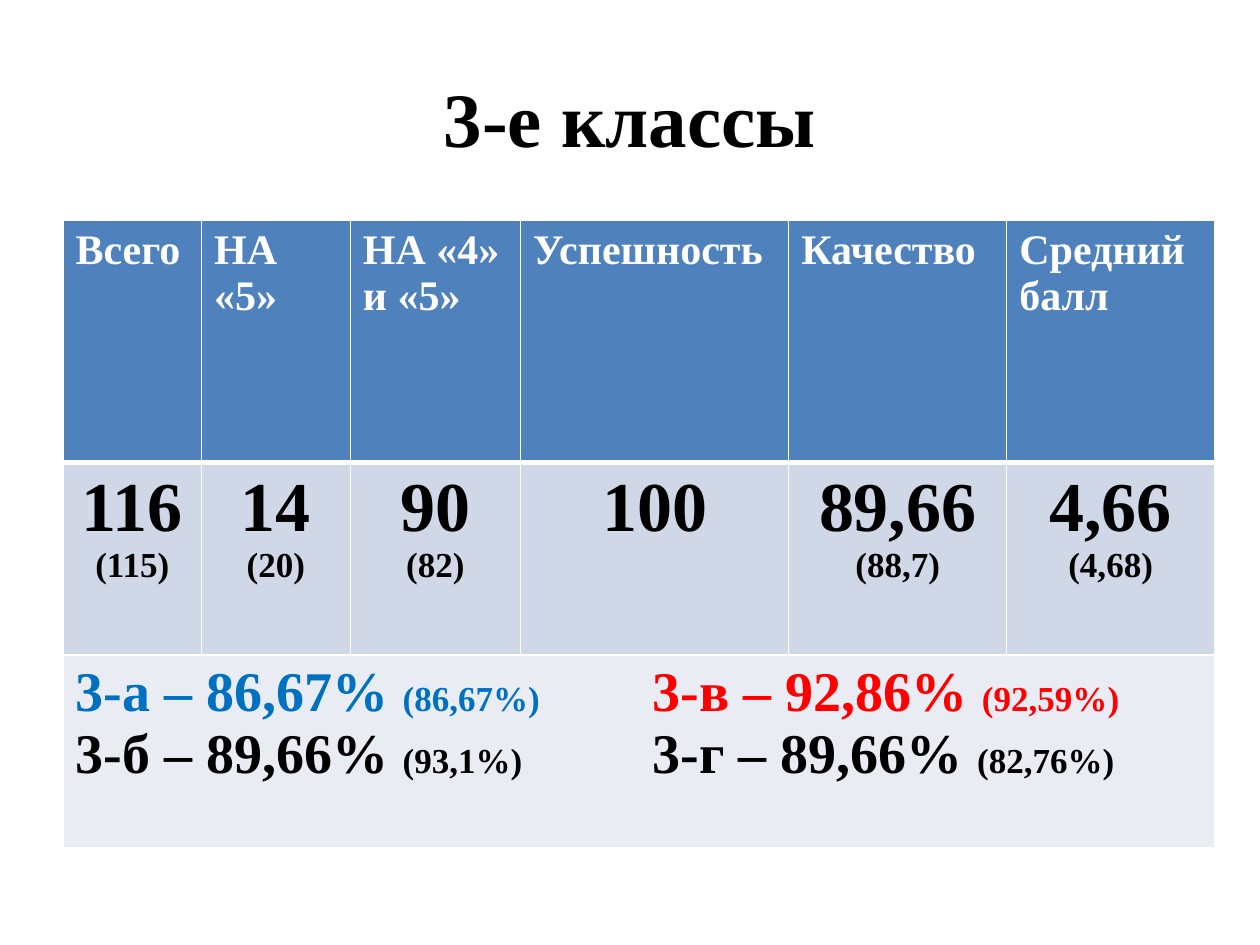
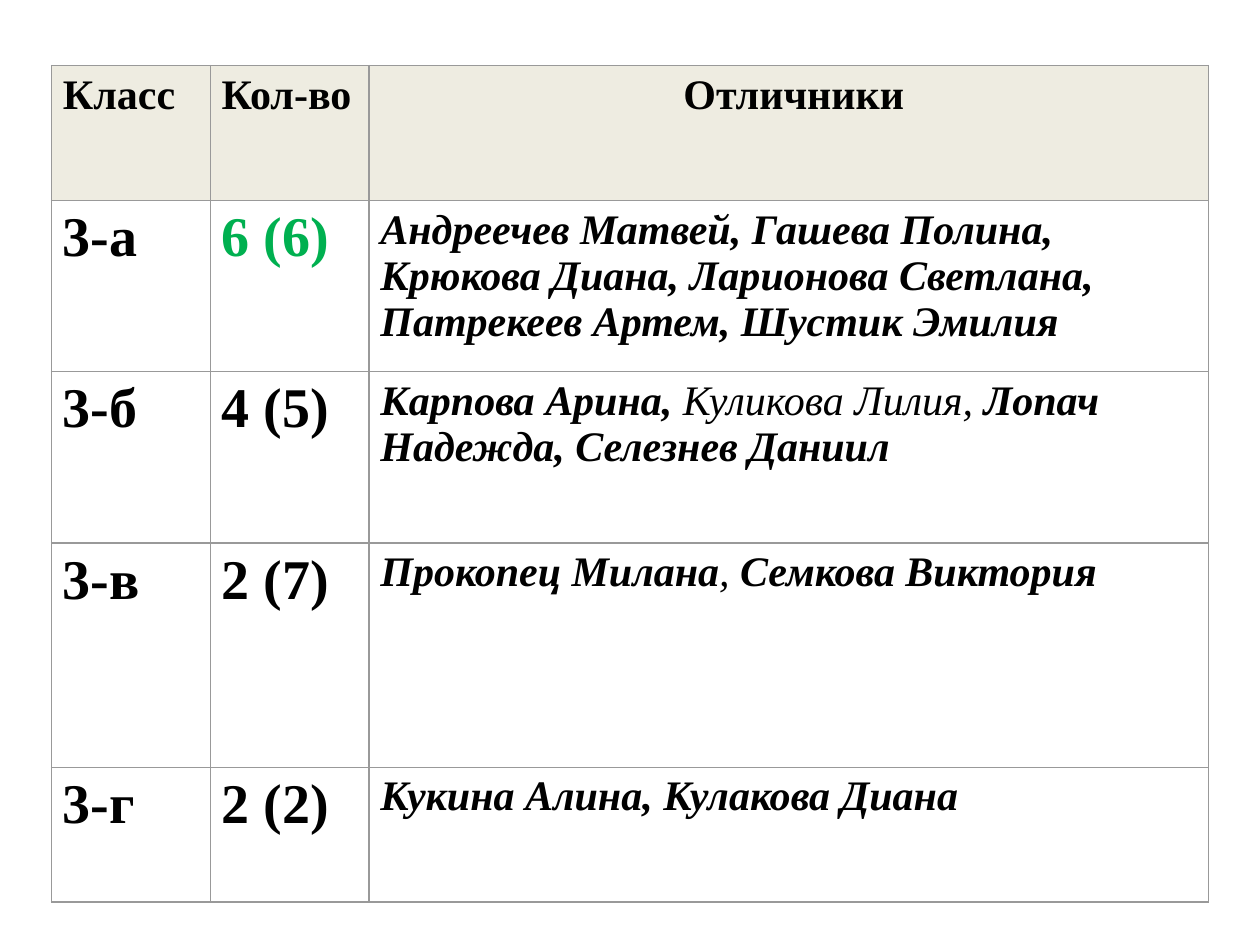
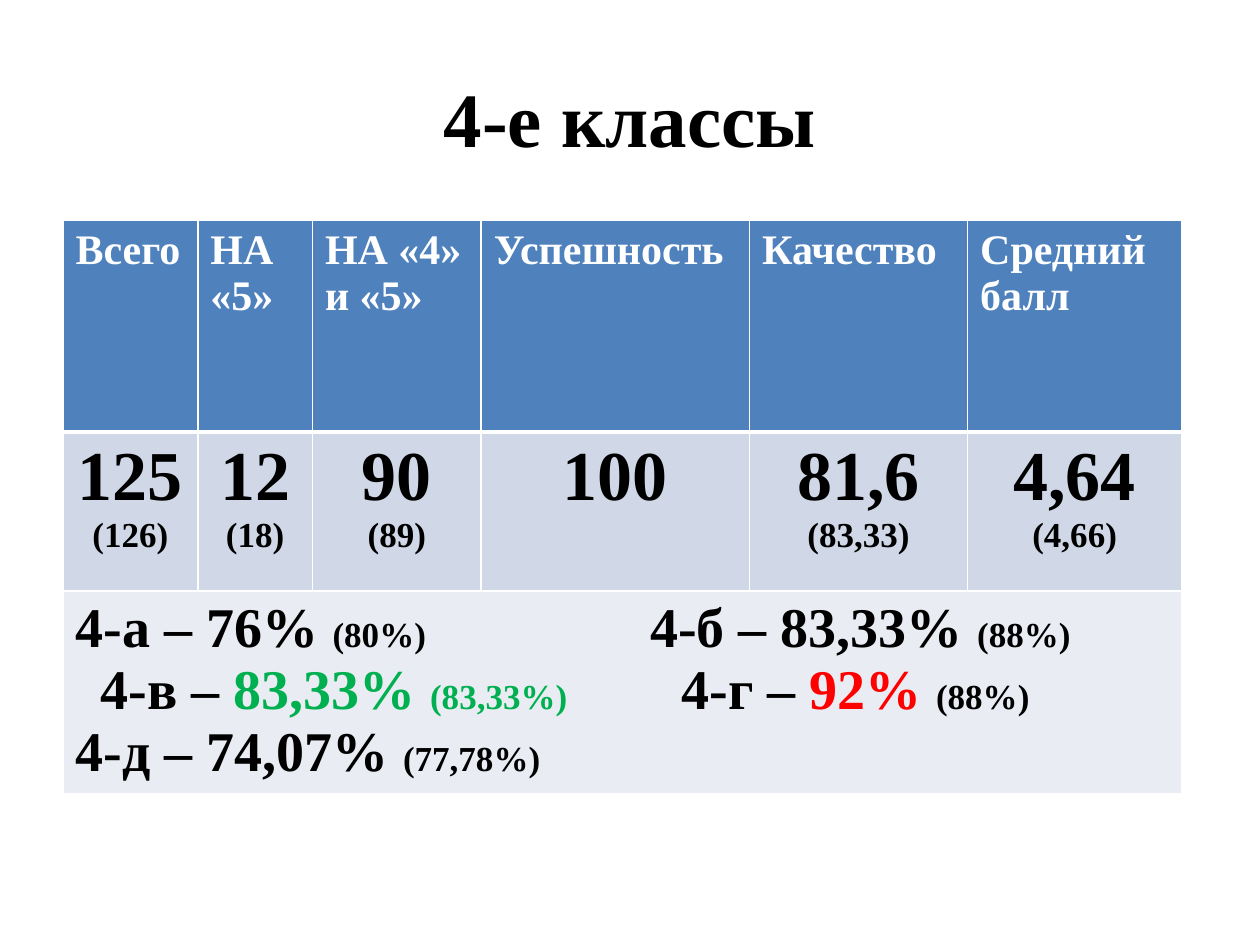
from lxml.etree import SubElement
from pptx import Presentation
from pptx.dml.color import RGBColor
from pptx.enum.text import MSO_ANCHOR, PP_ALIGN
from pptx.oxml.ns import qn
from pptx.util import Emu, Inches, Pt

# Shared look
FONT = "Times New Roman"
BLACK, WHITE, GREY = "000000", "FFFFFF", "999999"
BLUE, RED, GREEN = "0070C0", "FF0000", "00B050"
HEADER_FILL, VALUE_FILL, CLASS_FILL, LIST_FILL = "4F81BD", "D0D8E7", "E9ECF3", "EEECE1"
THIN, THICK = 0.96, 3
SMALL, MEDIUM, LARGE, HUGE, TITLE = 20, 24, 32, 40, 44

# Content: class lines hold (text, size, colour) spans, tabs mark columns
HEADINGS = ["Всего", "НА «5»", "НА «4» и «5»", "Успешность", "Качество", "Средний балл"]

THIRD_GRADE = {
    "title": "3-е классы",
    "columns": [1.1, 1.18, 1.35, 2.13, 1.73, 1.65],
    "rows": [1.92, 1.53, 1.53],
    "values": [("116", "(115)"), ("14", "(20)"), ("90", "(82)"),
               ("100",), ("89,66", "(88,7)"), ("4,66", "(4,68)")],
    "classes": [
        ([4.58], [("3-а – 86,67% ", LARGE, BLUE), ("(86,67%)", SMALL, BLUE),
                  ("\t3-в – 92,86% ", LARGE, RED), ("(92,59%)", SMALL, RED)]),
        ([4.58], [("3-б – 89,66% ", LARGE, BLACK), ("(93,1%)", SMALL, BLACK),
                  ("\t3-г – 89,66% ", LARGE, BLACK), ("(82,76%)", SMALL, BLACK)]),
    ],
}

FOURTH_GRADE = {
    "title": "4-е классы",
    "columns": [1.07, 0.91, 1.34, 2.13, 1.73, 1.7],
    "rows": [1.68, 1.26, 1.61],
    "values": [("125", "(126)"), ("12", "(18)"), ("90", "(89)"),
               ("100",), ("81,6", "(83,33)"), ("4,64", "(4,66)")],
    "classes": [
        ([4.56], [("4-а – 76% ", LARGE, BLACK), ("(80%)", SMALL, BLACK),
                  ("\t4-б – 83,33% ", LARGE, BLACK), ("(88%)", SMALL, BLACK)]),
        ([0.2, 4.81], [("\t4-в – ", LARGE, BLACK), ("83,33% ", LARGE, GREEN),
                       ("(83,33%)", SMALL, GREEN), ("\t4-г – ", LARGE, BLACK),
                       ("92% ", LARGE, RED), ("(88%)", SMALL, BLACK)]),
        ([], [("4-д – 74,07% ", LARGE, BLACK), ("(77,78%)", SMALL, BLACK)]),
    ],
}

# Pupils: (class, count, count colour, [(names, bold)])
PUPIL_HEADINGS = ["Класс", "Кол-во", "Отличники"]
PUPILS = [
    ("3-а", "6 (6)", GREEN, [("Андреечев Матвей, Гашева Полина, Крюкова Диана, "
                              "Ларионова Светлана, Патрекеев Артем, Шустик Эмилия", True)]),
    ("3-б", "4 (5)", BLACK, [("Карпова Арина, ", True), ("Куликова Лилия, ", False),
                             ("Лопач Надежда, Селезнев Даниил", True)]),
    ("3-в", "2 (7)", BLACK, [("Прокопец Милана", True), (", ", False),
                             ("Семкова Виктория", True)]),
    ("3-г", "2 (2)", BLACK, [("Кукина Алина, Кулакова Диана", True)]),
]
PUPIL_COLUMNS = [1.26, 1.26, 6.66]
PUPIL_ROWS = [1.07, 1.36, 1.36, 1.78, 1.07]


def rgb(value):
    return RGBColor.from_string(value)


def add_span(para, text, size=MEDIUM, color=BLACK, bold=True, italic=False):
    span = para.add_run()
    span.text = text
    font = span.font
    font.name, font.size = FONT, Pt(size)
    font.bold, font.italic = bold, italic
    font.color.rgb = rgb(color)


def next_para(frame, is_first, align=PP_ALIGN.LEFT, tabs=()):
    para = frame.paragraphs[0] if is_first else frame.add_paragraph()
    para.alignment = align
    if tabs:
        stops = SubElement(para._p.get_or_add_pPr(), qn("a:tabLst"))
        for position in tabs:
            SubElement(stops, qn("a:tab"), pos=str(Inches(position)), algn="l")
    return para


def style_cell(cell, fill, line, top=THIN, bottom=THIN):
    cell.fill.solid()
    cell.fill.fore_color.rgb = rgb(fill)
    properties = cell._tc.get_or_add_tcPr()
    edges = [("a:lnL", THIN), ("a:lnR", THIN), ("a:lnT", top), ("a:lnB", bottom)]
    for index, (tag, width) in enumerate(edges):
        edge = SubElement(properties, qn(tag), w=str(Pt(width)))
        color = SubElement(SubElement(edge, qn("a:solidFill")), qn("a:srgbClr"))
        color.set("val", line)
        properties.insert(index, edge)


def add_grid(page, left, top, columns, rows):
    widths, heights = [Inches(c) for c in columns], [Inches(r) for r in rows]
    table = page.shapes.add_table(len(rows), len(columns), Inches(left), Inches(top),
                                  Emu(sum(widths)), Emu(sum(heights))).table
    table.first_row = table.horz_banding = False
    for column, width in zip(table.columns, widths):
        column.width = width
    for row, height in zip(table.rows, heights):
        row.height = height
    return table


def add_grade_page(deck, grade):
    page = deck.slides.add_slide(deck.slide_layouts[5])
    title = page.shapes.title
    title.left, title.top = Inches(0.5), Inches(0.3)
    title.width, title.height = Inches(9), Inches(1.25)
    title.text_frame.vertical_anchor = MSO_ANCHOR.MIDDLE
    add_span(next_para(title.text_frame, True, PP_ALIGN.CENTER), grade["title"], size=TITLE)

    table = add_grid(page, 0.5, 1.75, grade["columns"], grade["rows"])
    # Headings and values
    for column, (heading, values) in enumerate(zip(HEADINGS, grade["values"])):
        cell = table.cell(0, column)
        style_cell(cell, HEADER_FILL, WHITE, bottom=THICK)
        add_span(next_para(cell.text_frame, True), heading, color=WHITE)
        cell = table.cell(1, column)
        style_cell(cell, VALUE_FILL, WHITE, top=THICK)
        for index, (value, size) in enumerate(zip(values, (HUGE, SMALL))):
            para = next_para(cell.text_frame, index == 0, PP_ALIGN.CENTER)
            add_span(para, value, size=size)
    # Results of each class in one merged row
    cell = table.cell(2, 0)
    cell.merge(table.cell(2, len(HEADINGS) - 1))
    style_cell(cell, CLASS_FILL, WHITE)
    for index, (tabs, spans) in enumerate(grade["classes"]):
        para = next_para(cell.text_frame, index == 0, tabs=tabs)
        for text, size, color in spans:
            add_span(para, text, size=size, color=color)


def add_pupil_page(deck):
    page = deck.slides.add_slide(deck.slide_layouts[6])
    table = add_grid(page, 0.41, 0.52, PUPIL_COLUMNS, PUPIL_ROWS)
    for row in range(len(PUPIL_ROWS)):
        for column in range(len(PUPIL_COLUMNS)):
            cell = table.cell(row, column)
            style_cell(cell, WHITE if row else LIST_FILL, GREY)
            cell.margin_left, cell.margin_right = Inches(0.09), Inches(0.01)
    for column, heading in enumerate(PUPIL_HEADINGS):
        align = PP_ALIGN.CENTER if column == 2 else PP_ALIGN.LEFT
        add_span(next_para(table.cell(0, column).text_frame, True, align), heading)
    for row, (name, count, color, pupils) in enumerate(PUPILS, start=1):
        paras = [next_para(table.cell(row, column).text_frame, True) for column in range(3)]
        add_span(paras[0], name, size=LARGE)
        add_span(paras[1], count, size=LARGE, color=color)
        for text, bold in pupils:
            add_span(paras[2], text, bold=bold, italic=True)


def main():
    deck = Presentation()
    deck.slide_width, deck.slide_height = Inches(10), Inches(7.5)
    add_grade_page(deck, THIRD_GRADE)
    add_pupil_page(deck)
    add_grade_page(deck, FOURTH_GRADE)
    deck.save("out.pptx")


if __name__ == "__main__":
    main()
